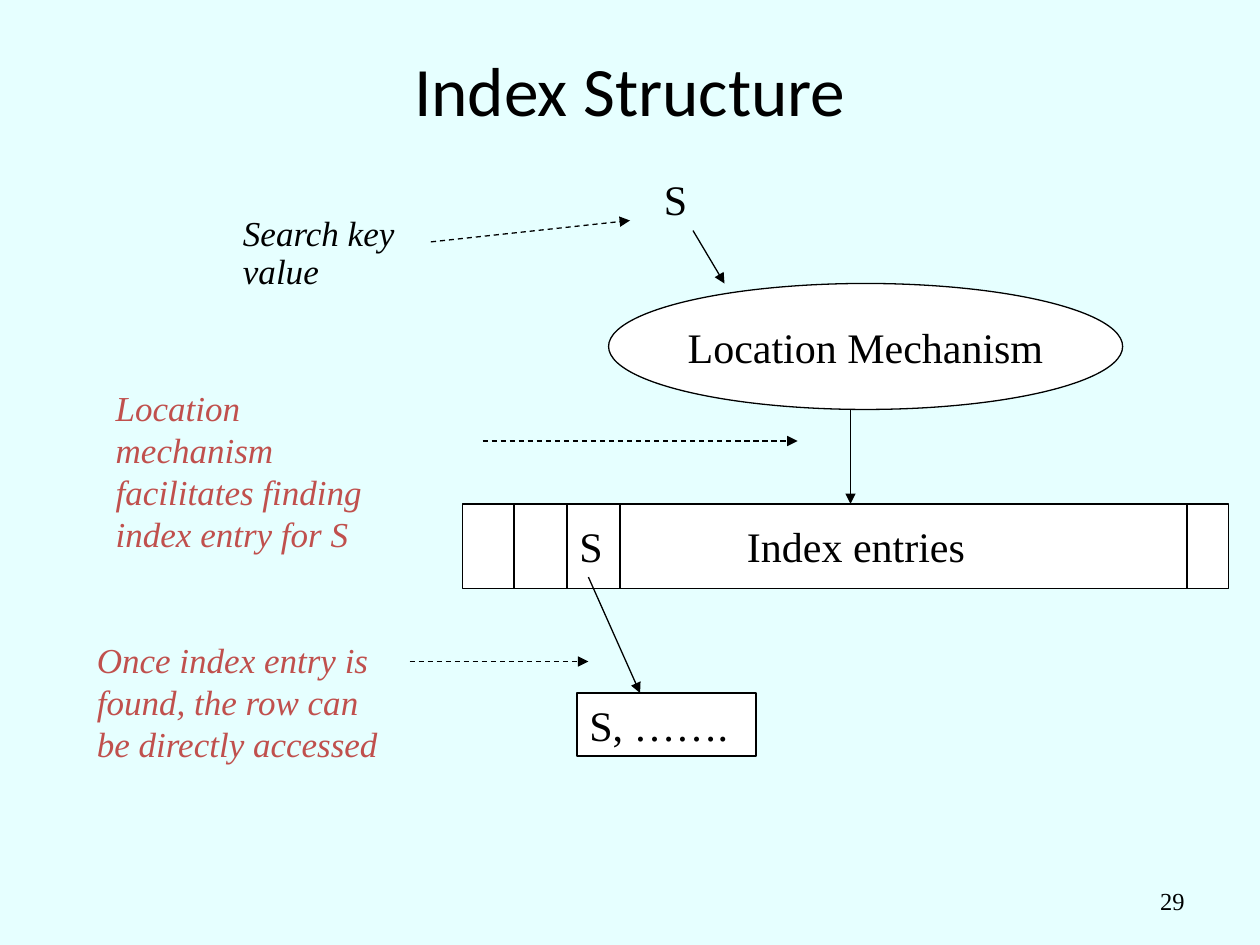
from dataclasses import dataclass
from typing import Optional

from lxml.etree import SubElement
from pptx import Presentation
from pptx.dml.color import RGBColor
from pptx.enum.dml import MSO_LINE
from pptx.enum.shapes import MSO_CONNECTOR, MSO_SHAPE
from pptx.enum.text import MSO_ANCHOR, PP_ALIGN
from pptx.oxml.ns import qn
from pptx.util import Inches, Pt

COLORS = {"background": "E6FFFF", "black": "000000", "white": "FFFFFF", "red": "C0504D"}


@dataclass
class Label:
    lines: list[str]
    left: float
    top: float
    width: float
    height: float
    size: float = 24
    font: str = "Times New Roman"
    color: str = "black"
    italic: bool = False
    align: PP_ALIGN = PP_ALIGN.LEFT
    anchor: MSO_ANCHOR = MSO_ANCHOR.TOP
    wrap: bool = False
    spacing: Optional[float] = None


@dataclass
class Box:
    kind: MSO_SHAPE
    left: float
    top: float
    width: float
    height: float
    label: Optional[Label] = None


@dataclass
class Line:
    start: tuple[float, float]
    end: tuple[float, float]
    arrow: bool = True
    dashed: bool = False


def color(name: str) -> RGBColor:
    return RGBColor.from_string(COLORS[name])


def write_text(shape, label: Label) -> None:
    frame = shape.text_frame
    frame.word_wrap = label.wrap
    frame.vertical_anchor = label.anchor
    frame.text = "\n".join(label.lines)
    for paragraph in frame.paragraphs:
        paragraph.alignment = label.align
        paragraph.line_spacing = label.spacing
        paragraph.font.name = label.font
        paragraph.font.size = Pt(label.size)
        paragraph.font.italic = label.italic
        paragraph.font.color.rgb = color(label.color)


def draw_label(slide, label: Label) -> None:
    shape = slide.shapes.add_textbox(
        Inches(label.left), Inches(label.top), Inches(label.width), Inches(label.height)
    )
    write_text(shape, label)


def draw_box(slide, box: Box) -> None:
    shape = slide.shapes.add_shape(
        box.kind, Inches(box.left), Inches(box.top), Inches(box.width), Inches(box.height)
    )
    shape.shadow.inherit = False
    shape.fill.solid()
    shape.fill.fore_color.rgb = color("white")
    shape.line.color.rgb = color("black")
    shape.line.width = Pt(0.75)
    if box.label:
        write_text(shape, box.label)


def draw_line(slide, line: Line) -> None:
    connector = slide.shapes.add_connector(
        MSO_CONNECTOR.STRAIGHT, *(Inches(value) for value in line.start + line.end)
    )
    connector.line.color.rgb = color("black")
    connector.line.width = Pt(0.75)
    if line.dashed:
        connector.line.dash_style = MSO_LINE.DASH
    if line.arrow:
        SubElement(connector.line._get_or_add_ln(), qn("a:tailEnd"), type="triangle")
    SubElement(connector._element.spPr, qn("a:effectLst"))


ROW_TOP, ROW_HEIGHT = 4, 0.67

LOCATION = Label(["Location Mechanism"], 4.83, 2.25, 4.08, 1,
                 align=PP_ALIGN.CENTER, anchor=MSO_ANCHOR.MIDDLE)

BOXES = [
    Box(MSO_SHAPE.OVAL, 4.83, 2.25, 4.08, 1, LOCATION),
    Box(MSO_SHAPE.RECTANGLE, 3.67, ROW_TOP, 6.08, ROW_HEIGHT),
    Box(MSO_SHAPE.RECTANGLE, 4.58, 5.5, 1.42, 0.5),
]

DIVIDERS = [
    Line((x, ROW_TOP), (x, ROW_TOP + ROW_HEIGHT), arrow=False)
    for x in (4.08, 4.5, 4.92, 9.42)
]

ARROWS = [
    Line((5.5, 1.83), (5.75, 2.25)),
    Line((6.75, 3.25), (6.75, ROW_TOP)),
    Line((4.67, 4.58), (5.08, 5.5)),
    Line((3.42, 1.92), (5, 1.75), dashed=True),
    Line((3.83, 3.5), (6.33, 3.5), dashed=True),
    Line((3.25, 5.25), (4.67, 5.25), dashed=True),
]

LABELS = [
    Label(["29"], 7.17, 6.95, 2.33, 0.4, size=14, align=PP_ALIGN.RIGHT,
          anchor=MSO_ANCHOR.MIDDLE, wrap=True),
    Label(["Index Structure"], 0.75, 0.33, 8.5, 0.75, size=39.6, font="Calibri",
          align=PP_ALIGN.CENTER, anchor=MSO_ANCHOR.MIDDLE, wrap=True),
    Label(["S"], 5.17, 1.33, 0.39, 0.5, wrap=True),
    Label(["Index entries"], 5.83, 4.08, 1.93, 0.5),
    Label(["S"], 4.5, 4.08, 0.39, 0.5),
    Label(["S, ……."], 4.58, 5.5, 1.3, 0.5),
    Label(["Search key", "value"], 1.83, 1.67, 1.41, 0.7, size=20, italic=True, spacing=0.9),
    Label(["Location mechanism", "facilitates finding", "index entry for S"],
          0.82, 3.02, 2.4, 1.43, size=20, color="red", italic=True, wrap=True),
    Label(["Once index entry is found, the row can be directly accessed"],
          0.67, 5.02, 2.58, 1.1, size=20, color="red", italic=True, wrap=True),
]


def main() -> None:
    presentation = Presentation()
    presentation.slide_width = Inches(10)
    presentation.slide_height = Inches(7.5)
    slide = presentation.slides.add_slide(presentation.slide_layouts[6])
    slide.background.fill.solid()
    slide.background.fill.fore_color.rgb = color("background")
    for box in BOXES:
        draw_box(slide, box)
    for line in DIVIDERS + ARROWS:
        draw_line(slide, line)
    for label in LABELS:
        draw_label(slide, label)
    presentation.save("out.pptx")


if __name__ == "__main__":
    main()
